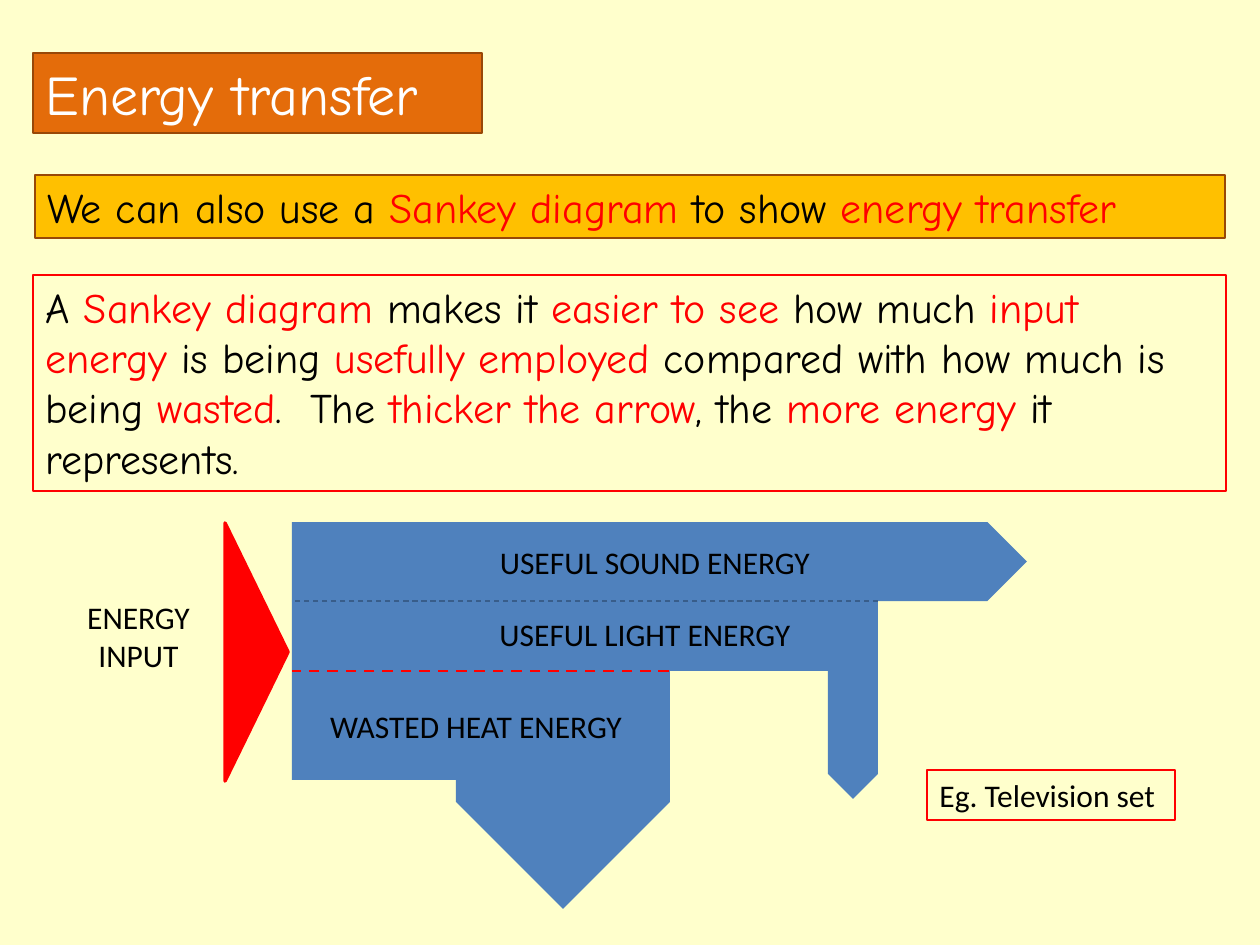
from lxml import etree
from pptx import Presentation
from pptx.dml.color import RGBColor
from pptx.enum import dml, shapes, text
from pptx.oxml.ns import qn
from pptx.util import Pt

PX = 914400 // 126
CREAM = RGBColor(0xFF, 0xFF, 0xCC)
ORANGE = RGBColor(0xE4, 0x6C, 0x0A)
AMBER = RGBColor(0xFF, 0xC0, 0x00)
BROWN = RGBColor(0x98, 0x48, 0x07)
BLUE = RGBColor(0x4F, 0x81, 0xBD)
NAVY = RGBColor(0x38, 0x5D, 0x8A)
RED = RGBColor(0xFF, 0x00, 0x00)
BLACK = RGBColor(0x00, 0x00, 0x00)
WHITE = RGBColor(0xFF, 0xFF, 0xFF)
HAND, PLAIN = "Comic Neue", "Calibri"
KIND = shapes.MSO_SHAPE
LEFT, CENTER = text.PP_ALIGN.LEFT, text.PP_ALIGN.CENTER

# Content: plain and highlighted pieces alternate, starting with plain
TITLE = ["Energy transfer"]
INTRO = ["We can also use a ", "Sankey diagram ", "to show ", "energy transfer"]
EXPLANATION = [
    "A ", "Sankey diagram ", "makes it ", "easier to see ", "how much ",
    "input energy", " is being ", "usefully employed ",
    "compared with how much is being ", "wasted", ".  The ",
    "thicker the arrow", ", the ", "more energy ", "it represents.",
]
# Boxes: place in px, fill, line, pieces, font, size
BOXES = [
    ((35, 175, 1190, 63), AMBER, BROWN, INTRO, HAND, 24),
    ((33, 275, 1193, 216), None, RED, EXPLANATION, HAND, 24),
    ((927, 770, 248, 50), None, RED, ["Eg. Television set"], PLAIN, 18),
]
# Flows: preset, place as seen in px, rotation, fill, line
FLOWS = [
    (KIND.PENTAGON, (292, 522, 735, 79), 0, BLUE, None),
    (KIND.RECTANGLE, (292, 601, 536, 70), 0, BLUE, None),
    (KIND.RECTANGLE, (292, 671, 238, 109), 0, BLUE, None),
    (KIND.PENTAGON, (828, 601, 50, 198), 90, BLUE, None),
    (KIND.PENTAGON, (456, 671, 214, 238), 90, BLUE, None),
    (KIND.ISOSCELES_TRIANGLE, (225, 523, 63, 258), 90, RED, RED),
]
# Dividers between flows: right end, left end, y, colour, width
DIVIDERS = [(878, 292, 601, NAVY, 0.75), (669, 292, 671, RED, 1.5)]
LABELS = [
    ("ENERGY INPUT", (64, 592, 149, 89)),
    ("USEFUL SOUND ENERGY", (382, 537, 546, 50)),
    ("USEFUL LIGHT ENERGY", (372, 609, 546, 50)),
    ("WASTED HEAT ENERGY", (307, 701, 338, 50)),
]


def emu(place):
    return [value * PX for value in place]


def paint(shape, fill, line, width=0.75):
    if fill is None:
        shape.fill.background()
    else:
        shape.fill.solid()
        shape.fill.fore_color.rgb = fill
    if line is None:
        shape.line.fill.background()
    else:
        shape.line.color.rgb = line
        shape.line.width = Pt(width)


def write(shape, pieces, font, size, colours=(BLACK, RED), align=LEFT):
    frame = shape.text_frame
    frame.word_wrap = True
    frame.auto_size = text.MSO_AUTO_SIZE.NONE
    frame.vertical_anchor = text.MSO_ANCHOR.TOP
    para = frame.paragraphs[0]
    para.alignment = align
    for index, piece in enumerate(pieces):
        span = para.add_run()
        span.text = piece
        span.font.name = font
        span.font.size = Pt(size)
        span.font.color.rgb = colours[index % 2]


def add_shape(page, kind, place, fill, line, width=0.75, rotation=0):
    left, top, wide, high = place
    if rotation == 90:  # swap the sides about the same centre
        left, top = left + (wide - high) / 2, top + (high - wide) / 2
        wide, high = high, wide
    shape = page.shapes.add_shape(kind, *map(int, emu((left, top, wide, high))))
    shape.rotation = rotation
    shape.shadow.inherit = False
    paint(shape, fill, line, width)
    return shape


def main():
    deck = Presentation()
    deck.slide_width, deck.slide_height = emu((1260, 945))
    page = deck.slides.add_slide(deck.slide_layouts[5])
    page.background.fill.solid()
    page.background.fill.fore_color.rgb = CREAM

    # Title
    title = page.shapes.title
    title.left, title.top, title.width, title.height = emu((33, 53, 449, 80))
    paint(title, ORANGE, BROWN)
    write(title, TITLE, HAND, 32, (WHITE, WHITE))

    # Text boxes with a border
    for place, fill, line, pieces, font, size in BOXES:
        box = add_shape(page, KIND.RECTANGLE, place, fill, line)
        write(box, pieces, font, size)

    # Sankey diagram
    for kind, place, rotation, fill, line in FLOWS:
        add_shape(page, kind, place, fill, line, 2, rotation)
    for right, left, y, colour, width in DIVIDERS:
        divider = page.shapes.add_connector(
            shapes.MSO_CONNECTOR.STRAIGHT, *emu((right, y, left, y)))
        divider.line.color.rgb = colour
        divider.line.width = Pt(width)
        divider.line.dash_style = dml.MSO_LINE.DASH
        etree.SubElement(divider._element.spPr, qn("a:effectLst"))
    for label, place in LABELS:
        write(page.shapes.add_textbox(*emu(place)), [label], PLAIN, 18, align=CENTER)

    deck.save("out.pptx")


if __name__ == "__main__":
    main()
